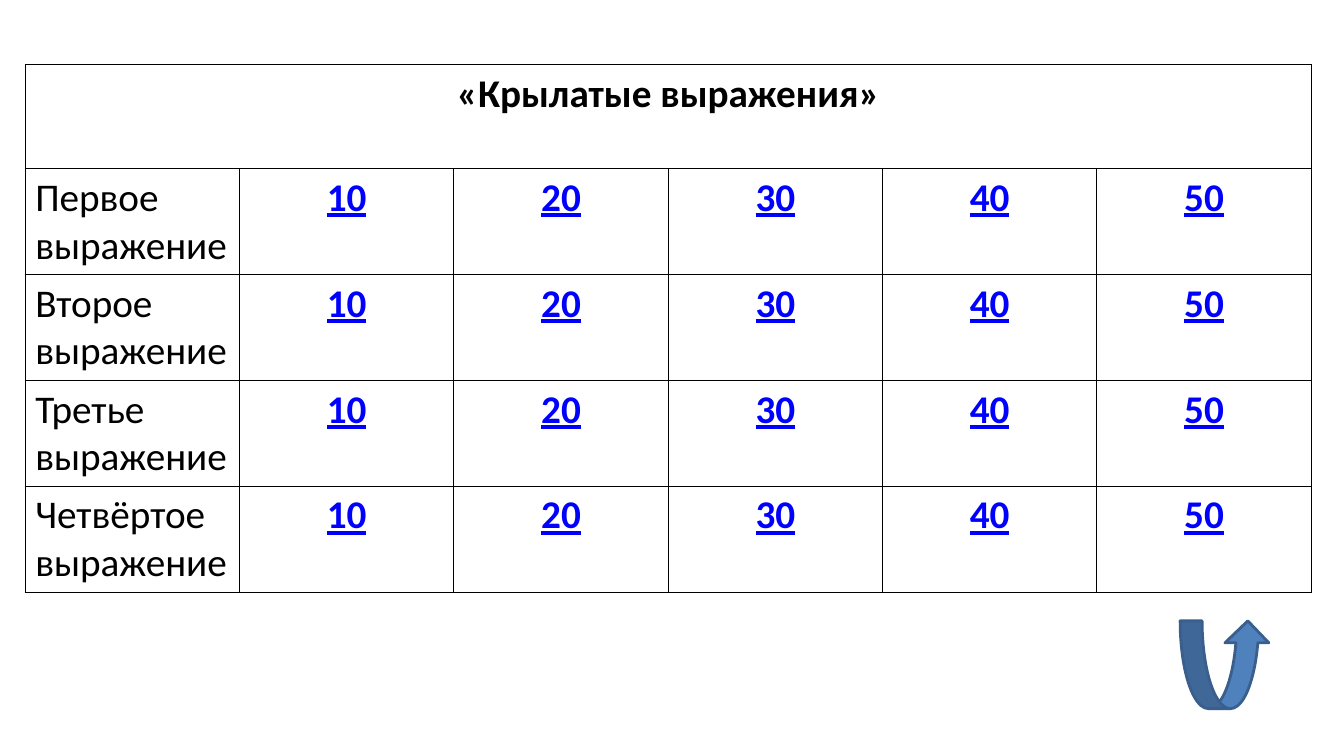
import pptx
import pptx.dml.color
import pptx.enum.shapes
import pptx.enum.text
import pptx.oxml
import pptx.oxml.ns
import pptx.util

Pt = pptx.util.Pt


def color(hex_string):
    return pptx.dml.color.RGBColor.from_string(hex_string)


def format_cell(cell, text, font_color="000000", bold=False, underline=False, centered=True):
    properties = cell._tc.get_or_add_tcPr()
    for side in ("lnL", "lnR", "lnT", "lnB"):
        properties.append(pptx.oxml.parse_xml(
            f'<a:{side} {pptx.oxml.ns.nsdecls("a")} w="{Pt(1)}"><a:solidFill>'
            f'<a:srgbClr val="000000"/></a:solidFill></a:{side}>'))
    cell.fill.solid()
    cell.fill.fore_color.rgb = color("FFFFFF")
    cell.text = text
    paragraph = cell.text_frame.paragraphs[0]
    alignment = pptx.enum.text.PP_ALIGN
    paragraph.alignment = alignment.CENTER if centered else alignment.LEFT
    paragraph.font.name = "Calibri"
    paragraph.font.size = Pt(28)
    paragraph.font.bold = bold
    paragraph.font.underline = underline
    paragraph.font.color.rgb = color(font_color)


# Slide
presentation = pptx.Presentation()
presentation.slide_width = Pt(960)
presentation.slide_height = Pt(540)
slide = presentation.slides.add_slide(presentation.slide_layouts[6])

# Question board
topics = ["Первое выражение", "Второе выражение", "Третье выражение", "Четвёртое выражение"]
points = [10, 20, 30, 40, 50]
row_count, column_count = len(topics) + 1, len(points) + 1
table = slide.shapes.add_table(
    row_count, column_count, Pt(18), Pt(46.2), Pt(918.6), Pt(372)).table
table.first_row = False
table.horz_banding = False
for column in table.columns:
    column.width = Pt(153.1)
for row in table.rows:
    row.height = Pt(74.4)

# Heading across all columns
for column_index in range(column_count):
    format_cell(table.cell(0, column_index), "", bold=True)
heading = table.cell(0, 0)
heading.merge(table.cell(0, column_count - 1))
heading.text_frame.paragraphs[0].text = "«Крылатые выражения»"

# Topics and their points
for row_index, topic in enumerate(topics, start=1):
    format_cell(table.cell(row_index, 0), topic, centered=False)
    for column_index, value in enumerate(points, start=1):
        format_cell(table.cell(row_index, column_index), str(value),
                    font_color="0000FF", bold=True, underline=True)

# Return arrow
arrow = slide.shapes.add_shape(
    pptx.enum.shapes.MSO_SHAPE.CURVED_UP_ARROW, Pt(843), Pt(443.5), Pt(64), Pt(62.7))
arrow.shadow.inherit = False
arrow.fill.solid()
arrow.fill.fore_color.rgb = color("4F81BD")
arrow.line.color.rgb = color("3A5F8C")
arrow.line.width = Pt(2)

presentation.save("out.pptx")
